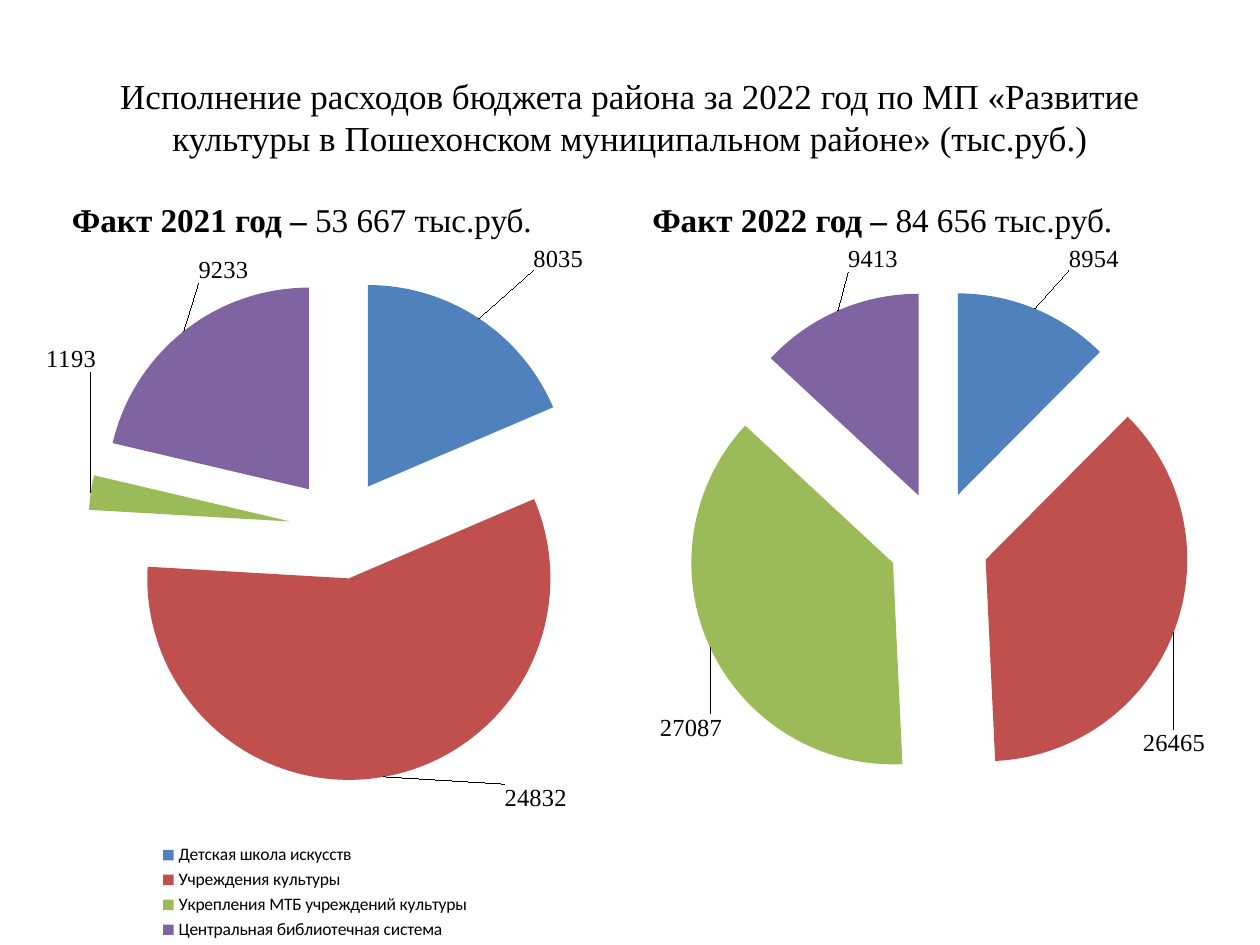
from dataclasses import dataclass

from pptx import Presentation
from pptx.chart.data import CategoryChartData
from pptx.dml.color import RGBColor
from pptx.enum.chart import XL_CHART_TYPE as ChartType
from pptx.enum.chart import XL_LABEL_POSITION as LabelPos
from pptx.enum.chart import XL_LEGEND_POSITION as LegendPos
from pptx.enum.text import MSO_ANCHOR as Anchor
from pptx.enum.text import PP_ALIGN as Align
from pptx.oxml import parse_xml
from pptx.oxml.ns import nsdecls, qn
from pptx.util import Cm, Pt


@dataclass(frozen=True)
class Theme:
    ink: RGBColor = RGBColor(0, 0, 0)
    slices: tuple = ("4F81BD", "C0504D", "9BBB59", "8064A2")
    serif: str = "Times New Roman"
    sans: str = "Calibri"
    title_size: int = 20
    heading_size: int = 19
    label_size: int = 14
    legend_size: int = 10


THEME = Theme()


def style_font(font, name, size, bold=None):
    font.name, font.size, font.bold = name, Pt(size), bold
    font.color.rgb = THEME.ink


def write(frame, *parts, size, align=Align.LEFT, anchor=Anchor.MIDDLE):
    """Fill a frame with one paragraph of (text, bold) parts."""
    frame.word_wrap = True
    frame.vertical_anchor = anchor
    paragraph = frame.paragraphs[0]
    paragraph.alignment = align
    for text, bold in parts:
        run = paragraph.add_run()
        run.text = text
        style_font(run.font, THEME.serif, size, bold)


def manual_layout(x, y, w=None, h=None, inner=False):
    """Chart layout in fractions; without a size it is an offset."""
    tags = []
    if inner:
        tags.append(("layoutTarget", "inner"))
    if w is not None:
        tags += [("xMode", "edge"), ("yMode", "edge")]
    tags += [("x", x), ("y", y)]
    if w is not None:
        tags += [("w", w), ("h", h)]
    body = "".join(f'<c:{tag} val="{value}"/>' for tag, value in tags)
    return parse_xml(f'<c:layout {nsdecls("c")}><c:manualLayout>{body}'
                     "</c:manualLayout></c:layout>")


def add_title(slide, box, text):
    title = slide.shapes.title
    title.left, title.top, title.width, title.height = box
    write(title.text_frame, (text, False), size=THEME.title_size,
          align=Align.CENTER)


def add_legend(chart, place):
    chart.has_legend = True
    legend = chart.legend
    legend.position = LegendPos.BOTTOM
    legend.include_in_layout = False
    style_font(legend.font, THEME.sans, THEME.legend_size)
    legend._element.find(qn("c:legendPos")).addnext(manual_layout(*place))


def format_labels(labels, element):
    """Values outside the slices, each kept on one line."""
    style_font(labels.font, THEME.serif, THEME.label_size)
    labels.position = LabelPos.OUTSIDE_END
    element.find(qn("c:txPr")).find(qn("a:bodyPr")).set("wrap", "none")


def add_pie(slide, box, categories, values, plot_place, label_shifts):
    data = CategoryChartData()
    data.categories = categories
    data.add_series("Series 1", values)
    chart = slide.shapes.add_chart(ChartType.PIE, *box, data).chart
    chart.has_title = False
    chart.has_legend = False
    style_font(chart.font, THEME.sans, THEME.legend_size)

    # Plot area
    area = chart._chartSpace.chart.plotArea
    for old in area.findall(qn("c:layout")):
        area.remove(old)
    area.insert(0, manual_layout(*plot_place, inner=True))

    # Exploded slices
    pie = chart.plots[0]
    pie.vary_by_categories = True
    series = pie.series[0]
    series._element.find(qn("c:tx")).addnext(
        parse_xml(f'<c:explosion {nsdecls("c")} val="25"/>'))

    # Value labels, moved away on leader lines
    labels = series.data_labels
    labels.show_value = True
    format_labels(labels, labels._element)
    for i, (color, shift) in enumerate(zip(THEME.slices, label_shifts)):
        point = series.points[i]
        fill = point.format.fill
        fill.solid()
        fill.fore_color.rgb = RGBColor.from_string(color)
        label = point.data_label
        style_font(label.font, THEME.serif, THEME.label_size)
        format_labels(label, label._dLbl)
        label._dLbl.find(qn("c:idx")).addnext(manual_layout(*shift))
    return chart


def add_year(slide, left, indent, year, total, chart_height, **pie):
    """One half of the slide: the heading above its pie."""
    heading = slide.shapes.add_textbox(left + indent, Cm(3.17),
                                       Cm(11.23), Cm(1.78))
    write(heading.text_frame, (f"Факт {year} год – ", True), (total, False),
          size=THEME.heading_size, anchor=Anchor.BOTTOM)
    return add_pie(slide, (left, Cm(4.95), Cm(12.7), chart_height), **pie)


def main():
    prs = Presentation()
    prs.slide_width, prs.slide_height = Cm(25.4), Cm(19.05)
    slide = prs.slides.add_slide(prs.slide_layouts[5])

    add_title(slide, (Cm(1.27), Cm(0.76), Cm(22.86), Cm(3.18)),
              "Исполнение расходов бюджета района за 2022 год по МП "
              "«Развитие культуры в Пошехонском муниципальном районе» "
              "(тыс.руб.)")

    pie_2021 = add_year(
        slide, Cm(0), Cm(1.2), 2021, "53 667 тыс.руб.", Cm(14.1),
        categories=("Детская школа искусств", "Учреждения культуры",
                    "Укрепления МТБ учреждений культуры",
                    "Центральная библиотечная система"),
        values=(8035, 24832, 1193, 9233),
        plot_place=(0.14, 0.04, 0.8, 0.73),
        label_shifts=((0.08, -0.06), (0.19, 0),
                      (0.02, -0.17), (0.11, -0.06)))
    add_legend(pie_2021, (0.25, 0.85, 0.5, 0.15))

    add_year(
        slide, Cm(12.7), Cm(0.2), 2022, "84 656 тыс.руб.", Cm(12.7),
        categories=("1", "2", "3", "4"),
        values=(8954, 26465, 27087, 9413),
        plot_place=(0.09, 0.07, 0.8, 0.8),
        label_shifts=((0.05, -0.05), (-0.06, 0.15),
                      (0.03, 0.1), (0.1, -0.05)))

    prs.save("out.pptx")


if __name__ == "__main__":
    main()
